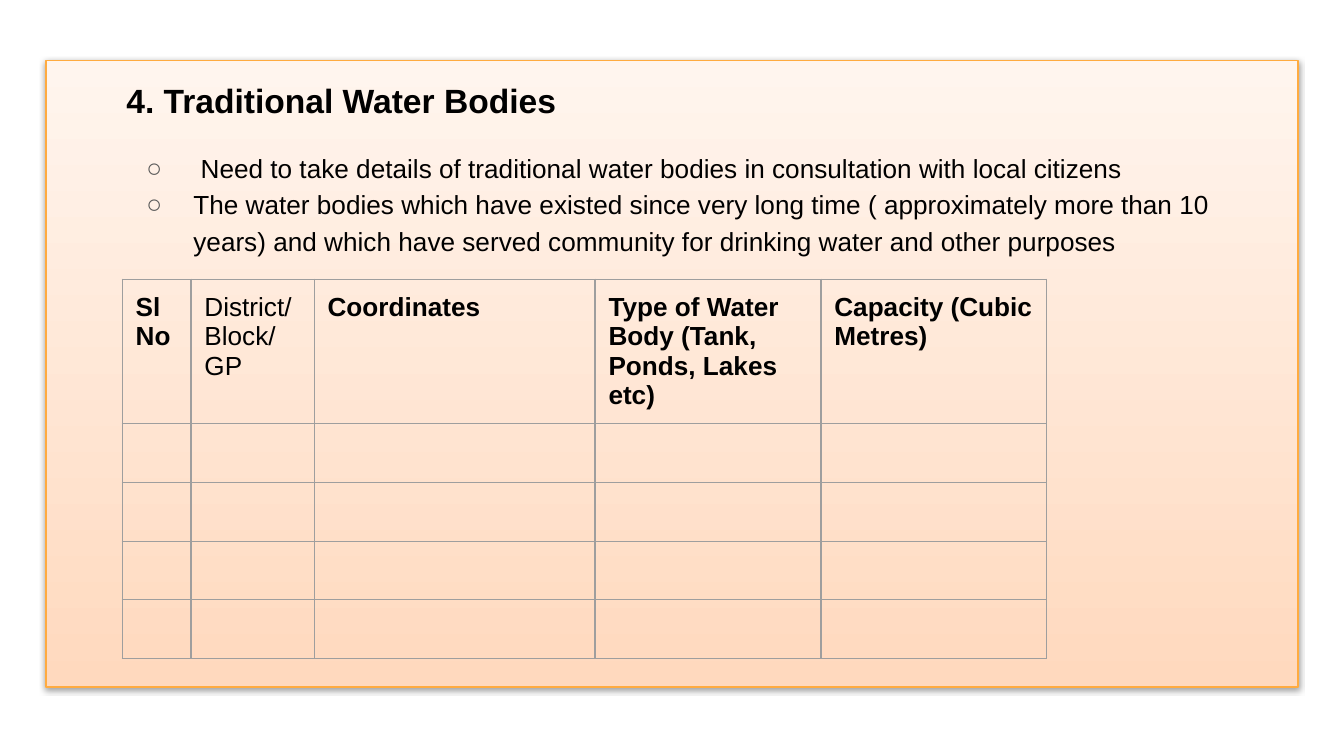
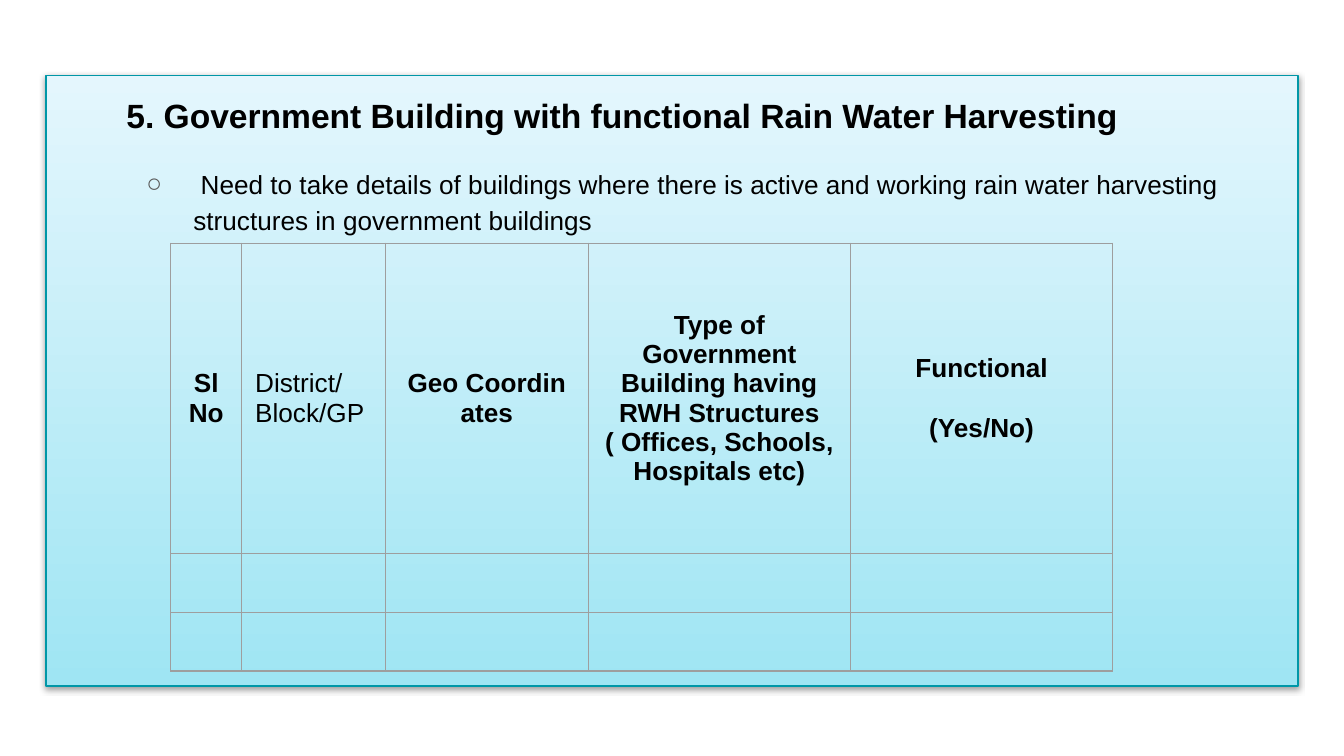
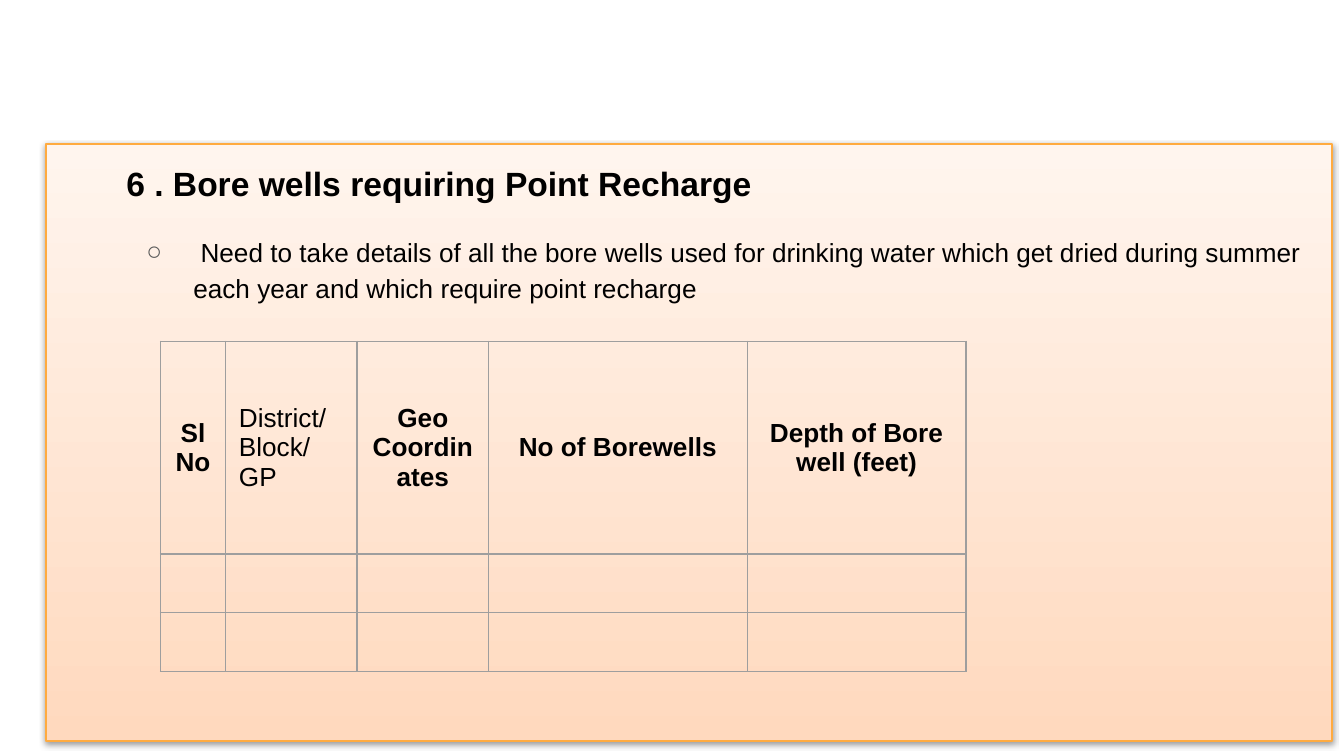
from dataclasses import dataclass
from typing import Any

import lxml.etree
import pptx
import pptx.dml.color
import pptx.enum.shapes
import pptx.enum.text
import pptx.oxml.ns
import pptx.shapes.autoshape
import pptx.slide
import pptx.table
import pptx.util

Pt = pptx.util.Pt
RGBColor = pptx.dml.color.RGBColor
Align = pptx.enum.text.PP_ALIGN
Anchor = pptx.enum.text.MSO_ANCHOR

# Shared colours, type and spacing
BLACK = RGBColor(0x00, 0x00, 0x00)
BULLET_GREY = RGBColor(0x59, 0x59, 0x59)
BORDER_GREY = RGBColor(0x9E, 0x9E, 0x9E)
ORANGE = RGBColor(0xFF, 0xAB, 0x40)
ORANGE_PALE = RGBColor(0xFF, 0xF5, 0xEE)
ORANGE_SOFT = RGBColor(0xFF, 0xD9, 0xBE)
TEAL = RGBColor(0x00, 0x97, 0xA7)
TEAL_PALE = RGBColor(0xE4, 0xF6, 0xFD)
TEAL_SOFT = RGBColor(0x9F, 0xE5, 0xF3)

FONT = "Arial"
INSET = Pt(7.2)
PANEL_LEFT = Pt(24.5)
TITLE_HEIGHT = Pt(40)
BULLETS_TOP = Pt(47)
EMPTY_ROW_HEIGHT = Pt(30.2)

TITLE_FONT = {"name": FONT, "size": Pt(18), "bold": True}
BODY_FONT = {"name": FONT, "size": Pt(14), "bold": False}
HEADER_FONT = BODY_FONT | {"bold": True}
INSETS = {f"margin_{side}": INSET for side in ("left", "top", "right", "bottom")}
TEXT_FRAME = INSETS | {
    "word_wrap": True,
    "auto_size": pptx.enum.text.MSO_AUTO_SIZE.NONE,
    "vertical_anchor": Anchor.TOP,
}
PARAGRAPH = {"alignment": Align.LEFT, "line_spacing": 1.15, "space_before": Pt(0)}


@dataclass(frozen=True)
class Palette:
    outline: RGBColor
    top: RGBColor
    bottom: RGBColor


@dataclass(frozen=True)
class Panel:
    top: float
    width: float
    height: float
    palette: Palette


@dataclass(frozen=True)
class SurveyTable:
    left: float
    top: float
    widths: tuple[float, ...]
    header_height: float
    empty_rows: int
    headers: tuple[str, ...]
    centred: bool = True


@dataclass(frozen=True)
class Topic:
    title: str
    bullets: tuple[str, ...]
    panel: Panel
    table: SurveyTable


PEACH = Palette(ORANGE, ORANGE_PALE, ORANGE_SOFT)
AQUA = Palette(TEAL, TEAL_PALE, TEAL_SOFT)
DISTRICT = "District/Block/GP"

TOPICS = (
    Topic(
        "4. Traditional Water Bodies",
        (
            " Need to take details of traditional water bodies in consultation with local citizens",
            "The water bodies which have existed since very long time ( approximately more than 10 "
            "years) and which have served community for drinking water and other purposes",
        ),
        Panel(32.4, 671, 335.5, PEACH),
        SurveyTable(
            65.5, 149.6, (36.8, 66, 150.5, 121, 121), 77, 4,
            ("Sl No", DISTRICT, "Coordinates",
             "Type of Water Body (Tank, Ponds, Lakes etc)", "Capacity (Cubic Metres)"),
            centred=False,
        ),
    ),
    Topic(
        "5. Government Building with functional Rain Water Harvesting",
        (
            " Need to take details of buildings where there is active and working rain water "
            "harvesting structures in government buildings",
        ),
        Panel(40.5, 671, 327, AQUA),
        SurveyTable(
            91.5, 130.3, (38, 77, 108.7, 140.5, 140.5), 166.2, 2,
            ("Sl No", DISTRICT, "Geo Coordin ates",
             "Type of Government Building having RWH Structures "
             "( Offices, Schools, Hospitals etc)", "Functional\n(Yes/No)"),
        ),
    ),
    Topic(
        "6 . Bore wells requiring Point Recharge",
        (
            " Need to take details of all the bore wells used for drinking water which get dried "
            "during summer each year and which require point recharge",
        ),
        Panel(77, 689, 320, PEACH),
        SurveyTable(
            86, 182.8, (34.8, 70.5, 70.5, 138.5, 117.3), 114, 2,
            ("Sl No", DISTRICT, "Geo Coordinates", "No of Borewells",
             "Depth of Bore well (feet)"),
        ),
    ),
)


def apply_format(target: Any, values: dict[str, Any]) -> None:
    for name, value in values.items():
        setattr(target, name, value)


def add_xml(parent: Any, tag: str, **attributes: str) -> Any:
    return lxml.etree.SubElement(parent, pptx.oxml.ns.qn(tag), attributes)


def write(paragraph: Any, text: str, font: dict[str, Any], layout: dict[str, Any]) -> None:
    apply_format(paragraph, layout)
    run = paragraph.add_run()
    run.text = text
    apply_format(run.font, font)
    run.font.color.rgb = BLACK


def add_bullet(paragraph: Any) -> None:
    properties = paragraph._p.get_or_add_pPr()
    properties.set("marL", str(Pt(72)))
    properties.set("indent", str(Pt(-25.2)))
    add_xml(add_xml(properties, "a:buClr"), "a:srgbClr", val=str(BULLET_GREY))
    add_xml(properties, "a:buFont", typeface=FONT)
    add_xml(properties, "a:buChar", char="○")


def add_shadow(shape: pptx.shapes.autoshape.Shape) -> None:
    shape.shadow.inherit = False
    effects = shape._element.spPr.find(pptx.oxml.ns.qn("a:effectLst"))
    shadow = add_xml(effects, "a:outerShdw", blurRad=str(Pt(3)), dist=str(Pt(1.5)),
                     dir="5400000", rotWithShape="0")
    add_xml(add_xml(shadow, "a:srgbClr", val=str(BLACK)), "a:alpha", val="38000")


def draw_panel(slide: pptx.slide.Slide, panel: Panel, bullets: tuple[str, ...]) -> None:
    backdrop = slide.shapes.add_shape(
        pptx.enum.shapes.MSO_SHAPE.RECTANGLE,
        PANEL_LEFT, Pt(panel.top), Pt(panel.width), Pt(panel.height))
    # The panel lies behind the title
    slide.shapes._spTree.insert(2, backdrop._element)
    backdrop.fill.gradient()
    backdrop.fill.gradient_angle = 270
    for stop, colour in zip(backdrop.fill.gradient_stops,
                            (panel.palette.top, panel.palette.bottom)):
        stop.color.rgb = colour
    backdrop.line.color.rgb = panel.palette.outline
    backdrop.line.width = Pt(1)
    add_shadow(backdrop)

    frame = backdrop.text_frame
    apply_format(frame, TEXT_FRAME | {"margin_top": BULLETS_TOP})
    for index, bullet in enumerate(bullets):
        paragraph = frame.add_paragraph() if index else frame.paragraphs[0]
        write(paragraph, bullet, BODY_FONT, PARAGRAPH)
        add_bullet(paragraph)


def draw_title(slide: pptx.slide.Slide, text: str, panel: Panel) -> None:
    title = slide.shapes.title
    apply_format(title, {"left": PANEL_LEFT, "top": Pt(panel.top),
                         "width": Pt(panel.width), "height": TITLE_HEIGHT})
    apply_format(title.text_frame, TEXT_FRAME | {"margin_left": Pt(43.2)})
    write(title.text_frame.paragraphs[0], text, TITLE_FONT, PARAGRAPH)


def format_cell(cell: pptx.table._Cell, anchor: Anchor) -> None:
    apply_format(cell, INSETS | {"vertical_anchor": anchor})
    properties = cell._tc.get_or_add_tcPr()
    for side in ("L", "R", "T", "B"):
        border = add_xml(properties, f"a:ln{side}", w=str(Pt(0.75)))
        add_xml(add_xml(border, "a:solidFill"), "a:srgbClr", val=str(BORDER_GREY))
    cell.fill.background()


def write_header(cell: pptx.table._Cell, text: str, centred: bool) -> None:
    is_district = text == DISTRICT
    font = BODY_FONT if is_district else HEADER_FONT
    alignment = Align.CENTER if centred and not is_district else Align.LEFT
    for index, line in enumerate(text.split("\n")):
        paragraph = cell.text_frame.add_paragraph() if index else cell.text_frame.paragraphs[0]
        write(paragraph, line, font,
              {"alignment": alignment, "space_before": Pt(16 * index)})


def draw_table(slide: pptx.slide.Slide, survey: SurveyTable) -> None:
    height = Pt(survey.header_height) + survey.empty_rows * EMPTY_ROW_HEIGHT
    table = slide.shapes.add_table(
        survey.empty_rows + 1, len(survey.widths),
        Pt(survey.left), Pt(survey.top), Pt(sum(survey.widths)), height).table
    apply_format(table, {"first_row": False, "horz_banding": False})
    for column, width in zip(table.columns, survey.widths):
        column.width = Pt(width)
    for index, row in enumerate(table.rows):
        row.height = EMPTY_ROW_HEIGHT if index else Pt(survey.header_height)
        for cell, header in zip(row.cells, survey.headers):
            format_cell(cell, Anchor.MIDDLE if survey.centred else Anchor.TOP)
            if index:
                # Size of the empty line, so the row keeps its height
                add_xml(cell.text_frame.paragraphs[0]._p, "a:endParaRPr", sz="1400")
            else:
                write_header(cell, header, survey.centred)


def main() -> None:
    deck = pptx.Presentation()
    apply_format(deck, {"slide_width": Pt(720), "slide_height": Pt(405)})
    title_only = deck.slide_layouts[5]
    for topic in TOPICS:
        slide = deck.slides.add_slide(title_only)
        draw_panel(slide, topic.panel, topic.bullets)
        draw_title(slide, topic.title, topic.panel)
        draw_table(slide, topic.table)
    deck.save("out.pptx")


if __name__ == "__main__":
    main()
